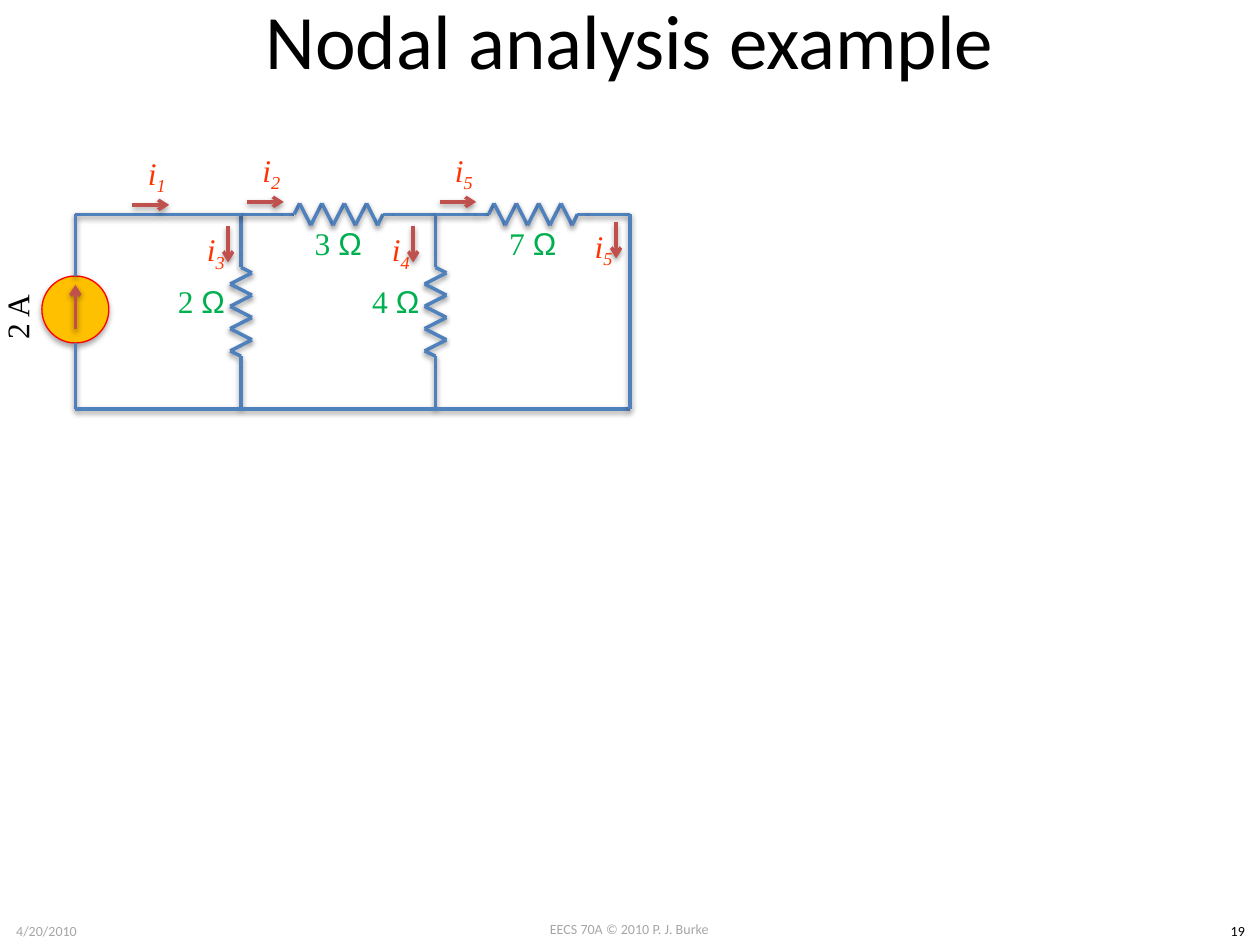
from itertools import pairwise

from lxml.etree import SubElement
from pptx import Presentation
from pptx.dml.color import RGBColor
from pptx.enum.shapes import MSO_CONNECTOR as Line, MSO_SHAPE as Shape
from pptx.enum.text import MSO_ANCHOR as Anchor, PP_ALIGN as Align
from pptx.oxml.ns import qn
from pptx.util import Cm, Pt

WIRE, ARROW, CURRENT, VALUE, GREY = "4F81BD", "C0504D", "FF3300", "00B050", "A6A6A6"
SERIF = "Times New Roman"
RESISTOR_LENGTH = 3.92


def color(hex_code):
    return RGBColor.from_string(hex_code)


def add_shadow(shape, distance, opacity):
    effects = SubElement(shape._element.spPr, qn("a:effectLst"))
    outer = SubElement(effects, qn("a:outerShdw"), blurRad="40000",
                       dist=str(distance), dir="5400000", rotWithShape="0")
    black = SubElement(outer, qn("a:srgbClr"), val="000000")
    SubElement(black, qn("a:alpha"), val=str(opacity * 1000))


def add_line(shapes, start, end, hex_code=WIRE, arrow=False):
    line = shapes.add_connector(Line.STRAIGHT, *(Cm(v) for v in (*start, *end)))
    line.line.color.rgb = color(hex_code)
    line.line.width = Pt(2)
    if arrow:
        SubElement(line.line._get_or_add_ln(), qn("a:tailEnd"), type="arrow")
    add_shadow(line, 20000, 38)


def add_text(shapes, box, runs, size=18, font=SERIF, hex_code="000000",
             italic=False, anchor=Anchor.MIDDLE, wrap=True, rotation=0):
    """Each run is (text, font or None for the default, is subscript)."""
    label = shapes.add_textbox(*(Cm(v) for v in box))
    label.rotation = rotation
    frame = label.text_frame
    frame.word_wrap = wrap
    frame.vertical_anchor = anchor
    paragraph = frame.paragraphs[0]
    paragraph.alignment = Align.CENTER
    for words, run_font, subscript in runs:
        run = paragraph.add_run()
        run.text = words
        run.font.name = run_font or font
        run.font.size = Pt(size)
        run.font.italic = italic
        run.font.color.rgb = color(hex_code)
        if subscript:
            run.font._element.set("baseline", "-25000")


def centered(x, y, width, height):
    return x - width / 2, y - height / 2, width, height


def add_resistor(shapes, x, y, ohms, vertical=False):
    """Leads, eight zigzag peaks and the value, starting at (x, y)."""
    peaks = [(1.18 + 0.225 * k, 0.22 * (-1) ** k) for k in range(8)]
    trace = [(0, 0), (0.84, 0), (1.07, 0), *peaks,
             (2.86, 0), (3.09, 0), (RESISTOR_LENGTH, 0)]
    group = shapes.add_group_shape()
    points = [(x + side, y + along) if vertical else (x + along, y - side)
              for along, side in trace]
    for start, end in pairwise(points):
        add_line(group.shapes, start, end)
    dx, dy = (-0.8, 1.74) if vertical else (1.96, 0.57)
    add_text(shapes, centered(x + dx, y + dy, 3.02, 1.85),
             [(f"{ohms} ", None, False), ("Ω", "Arial", False)], hex_code=VALUE)


def add_current(shapes, x, y, index, down=False):
    """Arrow starting at (x, y) with its current name beside it."""
    group = shapes.add_group_shape()
    end = (x, y + 0.74) if down else (x + 0.74, y)
    add_line(group.shapes, (x, y), end, ARROW, arrow=True)
    dx, dy = (-0.25, 0.53) if down else (0.49, -0.6)
    add_text(group.shapes, centered(x + dx, y + dy, 1.96, 1.55),
             [("i", None, False), (str(index), None, True)],
             hex_code=CURRENT, italic=True)


def add_source(shapes, x, top, bottom):
    """Current source on the left branch."""
    center, diameter = top + 1.92, 1.35
    radius = diameter / 2
    add_text(shapes, centered(x - 1.18, center + 0.15, 3.02, 1.85),
             [("2 A", None, False)], rotation=270)
    group = shapes.add_group_shape()
    circle = group.shapes.add_shape(
        Shape.OVAL, *(Cm(v) for v in centered(x, center, diameter, diameter)))
    circle.fill.solid()
    circle.fill.fore_color.rgb = color("FFC000")
    circle.line.color.rgb = color("FF0000")
    circle.line.width = Pt(0.75)
    add_shadow(circle, 23000, 35)
    add_line(group.shapes, (x, center + 0.4), (x, center - 0.5), ARROW, arrow=True)
    add_line(group.shapes, (x, center - radius), (x, top))
    add_line(group.shapes, (x, center + radius), (x, bottom))


def add_circuit(shapes, left, top, width, height):
    right, bottom = left + width, top + height
    node_a, node_b = right - 2 * RESISTOR_LENGTH, right - RESISTOR_LENGTH

    # Resistors
    for node, down_ohms, across_ohms in ((node_a, 2, 3), (node_b, 4, 7)):
        add_resistor(shapes, node, top, down_ohms, vertical=True)
        add_resistor(shapes, node, top, across_ohms)

    # Source and outer wires
    add_line(shapes, (node_a, top), (left, top))
    add_source(shapes, left, top, bottom)
    add_line(shapes, (left, bottom), (right, bottom))
    add_line(shapes, (right, top), (right, bottom))

    # Currents into and out of the nodes
    for dx, dy, index, down in ((1.15, -0.19, 1, False), (3.46, -0.25, 2, False),
                                (7.34, -0.25, 5, False), (3.08, 0.23, 3, True),
                                (6.81, 0.23, 4, True), (10.9, 0.15, 5, True)):
        add_current(shapes, left + dx, top + dy, index, down)


def add_footer(shapes, top):
    for left, dy, width, words, hex_code in (
            (9.73, 0, 5.92, "EECS 70A © 2010 P. J. Burke", GREY),
            (0, 0.03, 1.88, "4/20/2010", GREY),
            (24.51, 0.03, 0.89, "19", "000000")):
        add_text(shapes, (left, top + dy, width, 0.6), [(words, None, False)],
                 size=8, font="Calibri", hex_code=hex_code,
                 anchor=Anchor.TOP, wrap=False)


def main():
    deck = Presentation()
    deck.slide_width, deck.slide_height = Cm(25.4), Cm(19.05)
    shapes = deck.slides.add_slide(deck.slide_layouts[6]).shapes
    add_footer(shapes, 18.44)
    add_text(shapes, (1.27, -0.43, 22.86, 2.41),
             [("Nodal analysis example", None, False)], size=44, font="Calibri")
    add_circuit(shapes, 1.52, 4.32, 11.18, 3.92)
    deck.save("out.pptx")


if __name__ == "__main__":
    main()
